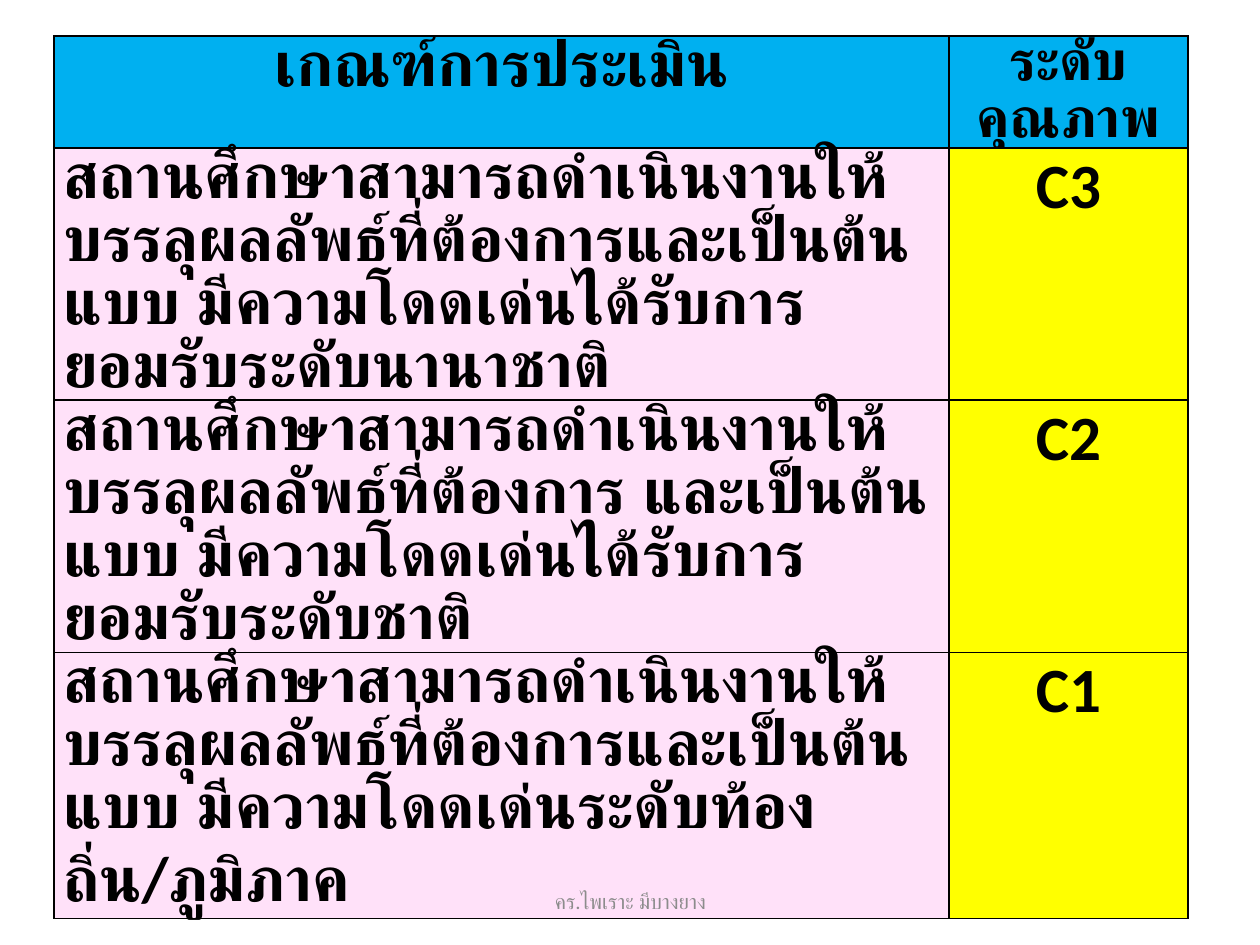
from pptx import Presentation
from pptx.dml.color import RGBColor as Rgb
from pptx.enum.lang import MSO_LANGUAGE_ID as Lang
from pptx.enum.text import MSO_ANCHOR as Anchor, PP_ALIGN as Align
from pptx.oxml import parse_xml as to_xml
from pptx.oxml.ns import nsdecls
from pptx.util import Emu, Pt

SCALE = 914400 / 126
BLACK, BLUE, PINK, YELLOW, GREY = "000000", "00B0F0", "FFE1F9", "FFFF00", "8C8C8C"
START = "สถานศึกษาสามารถดำเนินงานให้บรรลุผลลัพธ์ที่ต้องการ"
MODEL = "และเป็นต้นแบบ มีความโดดเด่น"
LEVELS = [
    (START + MODEL + "ได้รับการยอมรับระดับนานาชาติ", "C3"),
    (START + " " + MODEL + "ได้รับการยอมรับระดับชาติ", "C2"),
    (START + MODEL + "ระดับท้องถิ่น/ภูมิภาค", "C1"),
]


def px(n):
    return Emu(round(n * SCALE))


def color(code):
    return Rgb.from_string(code)


def apply(obj, style):
    for name, value in style.items():
        setattr(obj, name, value)


class Deck:
    font = "Calibri"
    inset = {"margin_left": px(9), "margin_right": px(9),
             "margin_top": 0, "margin_bottom": 0}

    def __init__(self, wide, high):
        self.file = Presentation()
        apply(self.file, {"slide_width": px(wide), "slide_height": px(high)})
        self.slide = self.file.slides.add_slide(self.file.slide_layouts[6])

    def text(self, frame, words, size, ink=BLACK, bold=False, align=Align.CENTER):
        frame.word_wrap = True
        para = frame.paragraphs[0]
        para.alignment = align
        run = para.add_run()
        run.text = words
        apply(run.font, {"name": self.font, "size": Pt(size), "bold": bold,
                         "language_id": Lang.THAI})
        run.font.color.rgb = color(ink)

    def border(self, cell, ink=BLACK, width=1):
        props = cell._tc.get_or_add_tcPr()
        for spot, side in enumerate("LRTB"):
            props.insert(spot, to_xml(
                f'<a:ln{side} {nsdecls("a")} w="{Pt(width)}"><a:solidFill>'
                f'<a:srgbClr val="{ink}"/></a:solidFill></a:ln{side}>'))

    def cell(self, cell, words, size, fill, align):
        apply(cell, self.inset)
        cell.fill.solid()
        cell.fill.fore_color.rgb = color(fill)
        self.border(cell)
        self.text(cell.text_frame, words, size, bold=True, align=align)

    def table(self, left, top, cols, rows, cells):
        box = (px(n) for n in (left, top, sum(cols), sum(rows)))
        table = self.slide.shapes.add_table(len(rows), len(cols), *box).table
        for col, wide in zip(table.columns, cols):
            col.width = px(wide)
        for row, high, line in zip(table.rows, rows, cells):
            row.height = px(high)
            for cell, item in zip(row.cells, line):
                self.cell(cell, *item)

    def label(self, left, top, wide, high, words, size, ink):
        box = self.slide.shapes.add_textbox(*(px(n) for n in (left, top, wide, high)))
        box.text_frame.vertical_anchor = Anchor.MIDDLE
        self.text(box.text_frame, words, size, ink)

    def save(self):
        self.file.save("out.pptx")


def main():
    deck = Deck(1260, 945)
    head = [("เกณฑ์การประเมิน", 36, BLUE, Align.CENTER),
            ("ระดับคุณภาพ", 32, BLUE, Align.CENTER)]
    body = [[(words, 36, PINK, Align.LEFT), (grade, 36, YELLOW, Align.CENTER)]
            for words, grade in LEVELS]
    deck.table(54, 36, [895, 239], [79] + [237] * len(body), [head] + body)
    deck.label(431, 876, 399, 50, "คร.ไพเราะ มีบางยาง", 12, GREY)
    deck.save()


if __name__ == "__main__":
    main()
